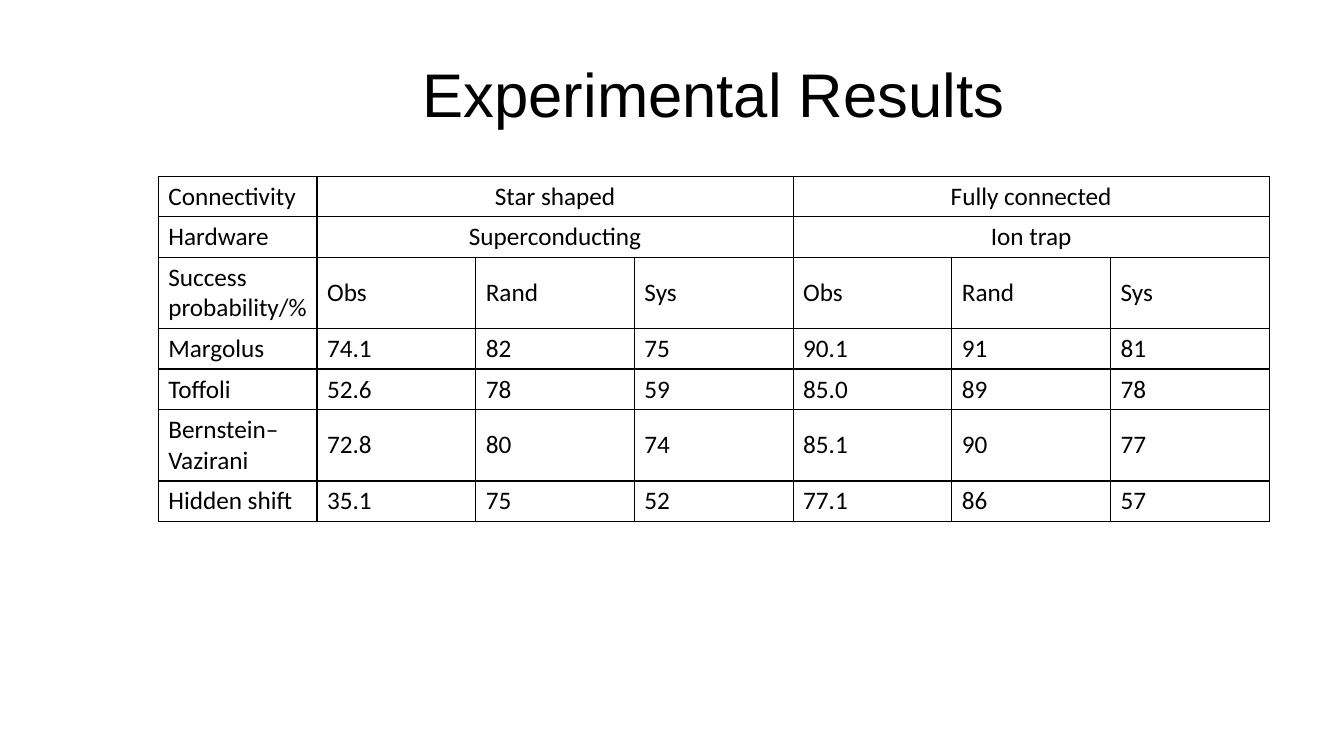
"""Build the experimental results slide with its connectivity table."""
from lxml.etree import SubElement
from pptx import Presentation
from pptx.dml.color import RGBColor
from pptx.enum.text import MSO_ANCHOR, PP_ALIGN
from pptx.oxml import parse_xml
from pptx.oxml.ns import nsdecls
from pptx.util import Inches, Pt

BLACK = "000000"
LEFT, WIDTH = Inches(1.57), Inches(11.02)
SINGLE_ROW, DOUBLE_ROW = Inches(0.4), Inches(0.71)
RESULTS = [
    ["Connectivity", "Star shaped", "Fully connected"],
    ["Hardware", "Superconducting", "Ion trap"],
    ["Success probability/%", "Obs", "Rand", "Sys", "Obs", "Rand", "Sys"],
    ["Margolus", "74.1", "82", "75", "90.1", "91", "81"],
    ["Toffoli", "52.6", "78", "59", "85.0", "89", "78"],
    ["Bernstein–Vazirani", "72.8", "80", "74", "85.1", "90", "77"],
    ["Hidden shift", "35.1", "75", "52", "77.1", "86", "57"],
]
GROUP_ROWS, GROUP_SPAN = 2, 3
DOUBLE_ROWS = (2, 5)
COLUMNS = 1 + 2 * GROUP_SPAN


def write(frame, text, font="Calibri", size=18, color=BLACK, align=PP_ALIGN.LEFT):
    para = frame.paragraphs[0]
    para.alignment = align
    span = para.add_run()
    span.text = text
    span.font.name = font
    span.font.size = Pt(size)
    span.font.color.rgb = RGBColor.from_string(color)


def outline(cell, color=BLACK, width=1):
    properties = cell._tc.get_or_add_tcPr()
    for position, side in enumerate(("lnL", "lnR", "lnT", "lnB")):
        line = parse_xml(
            f'<a:{side} {nsdecls("a")} w="{Pt(width)}"><a:solidFill>'
            f'<a:srgbClr val="{color}"/></a:solidFill></a:{side}>'
        )
        properties.insert(position, line)


deck = Presentation()
deck.slide_width, deck.slide_height = Inches(13.33), Inches(7.5)
page = deck.slides.add_slide(deck.slide_layouts[6])

title = page.shapes.add_textbox(LEFT, Inches(0.3), WIDTH, Inches(1.25)).text_frame
title.word_wrap = True
title.vertical_anchor = MSO_ANCHOR.MIDDLE
write(title, "Experimental Results", font="Arial", size=44, align=PP_ALIGN.CENTER)

heights = [DOUBLE_ROW if row in DOUBLE_ROWS else SINGLE_ROW for row in range(len(RESULTS))]
table = page.shapes.add_table(
    len(RESULTS), COLUMNS, LEFT, Inches(1.75), WIDTH, sum(heights)
).table
table.first_row = table.horz_banding = False
for row, height in zip(table.rows, heights):
    row.height = height

for cell in table.iter_cells():
    cell.fill.background()
    cell.vertical_anchor = MSO_ANCHOR.MIDDLE
    outline(cell)

for row, texts in enumerate(RESULTS):
    grouped = row < GROUP_ROWS
    for index, text in enumerate(texts):
        heading = grouped and index > 0
        column = 1 + (index - 1) * GROUP_SPAN if heading else index
        cell = table.cell(row, column)
        if heading:
            cell.merge(table.cell(row, column + GROUP_SPAN - 1))
        write(cell.text_frame, text, align=PP_ALIGN.CENTER if heading else PP_ALIGN.LEFT)

deck.save("out.pptx")
